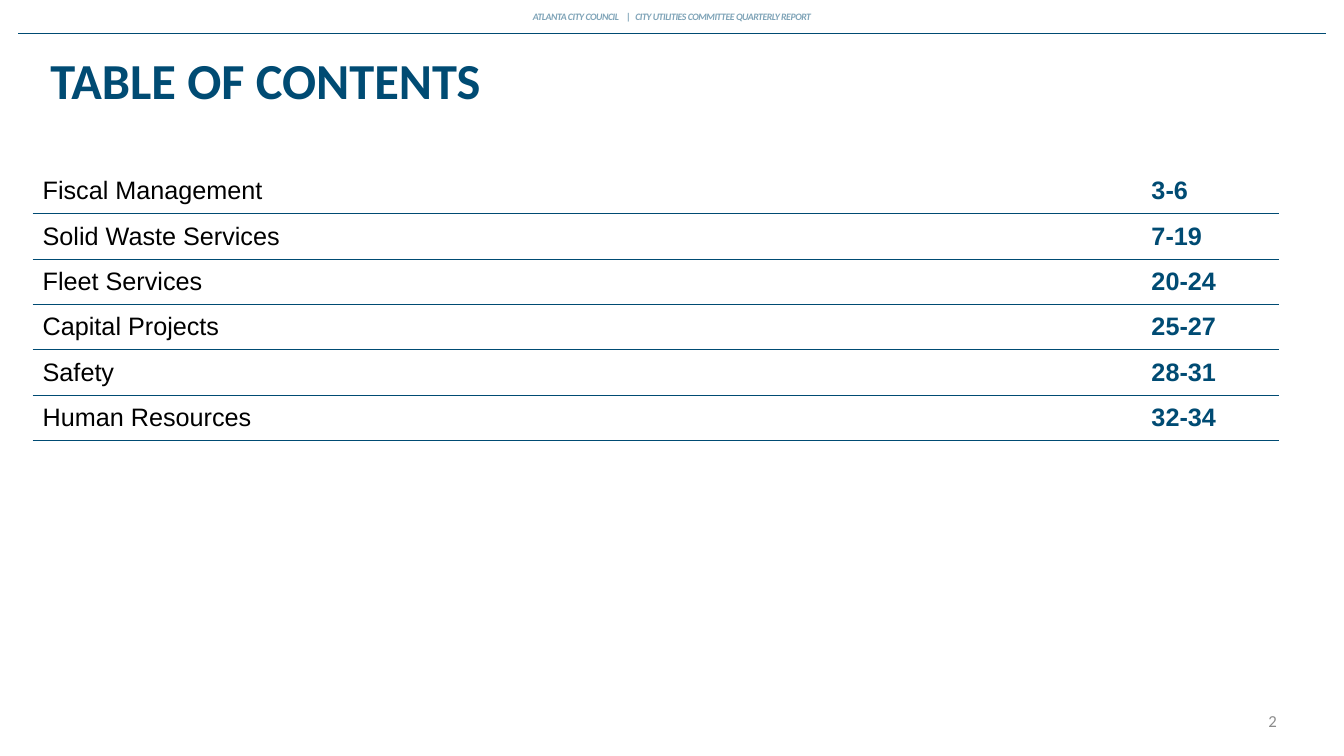
from lxml.etree import SubElement
from pptx import Presentation
from pptx.dml.color import RGBColor
from pptx.enum.shapes import MSO_CONNECTOR
from pptx.enum.text import MSO_ANCHOR, MSO_AUTO_SIZE, PP_ALIGN
from pptx.oxml import parse_xml
from pptx.oxml.ns import nsdecls, qn
from pptx.util import Pt

NAVY = RGBColor(0x00, 0x4B, 0x73)
PALE_BLUE = RGBColor(0x7F, 0xA4, 0xB8)
GRAY = RGBColor(0x8C, 0x8C, 0x8C)
BLACK = RGBColor(0x00, 0x00, 0x00)
RULE_WIDTH = Pt(0.75)
ROW_HEIGHT = 32.4

HEADER_SPANS = [
    ("ATLANTA CITY COUNCIL", -0.3),
    (" ", 3.8),
    ("|", -0.1),
    (" ", 1.4),
    ("CITY UTILITIES COMMITTEE QUARTERLY REPORT", -0.3),
]
CONTENTS = [
    ("Fiscal Management", "3-6"),
    ("Solid Waste Services", "7-19"),
    ("Fleet Services", "20-24"),
    ("Capital Projects", "25-27"),
    ("Safety", "28-31"),
    ("Human Resources", "32-34"),
]


def set_font(paragraph, name, size, color, bold=False, italic=False):
    font = paragraph.font
    font.name, font.size = name, Pt(size)
    font.bold, font.italic = bold, italic
    font.color.rgb = color


def prepare_frame(box, anchor, left_margin=0):
    frame = box.text_frame
    frame.word_wrap = True
    frame.auto_size = MSO_AUTO_SIZE.NONE
    frame.vertical_anchor = anchor
    frame.margin_left = Pt(left_margin)
    frame.margin_top = frame.margin_right = frame.margin_bottom = 0
    return frame.paragraphs[0]


def add_text_box(page, left, top, width, height, anchor, alignment):
    box = page.shapes.add_textbox(Pt(left), Pt(top), Pt(width), Pt(height))
    paragraph = prepare_frame(box, anchor)
    paragraph.alignment = alignment
    return paragraph


def add_header(page):
    paragraph = add_text_box(page, 350, 8, 260, 18.7, MSO_ANCHOR.TOP, PP_ALIGN.CENTER)
    for text, spacing in HEADER_SPANS:
        span = paragraph.add_run()
        span.text = text
        span.font._element.set("spc", str(round(spacing * 100)))
    set_font(paragraph, "Calibri", 7, PALE_BLUE, bold=True, italic=True)


def add_header_rule(page):
    rule = page.shapes.add_connector(
        MSO_CONNECTOR.STRAIGHT, Pt(13), Pt(23.8), Pt(946.8), Pt(23.8))
    rule.line.color.rgb = NAVY
    rule.line.width = RULE_WIDTH
    SubElement(rule._element.spPr, qn("a:effectLst"))


def set_title(page, text):
    title = page.shapes.title
    title.left, title.top, title.width, title.height = Pt(0), Pt(34.6), Pt(960), Pt(44)
    paragraph = prepare_frame(title, MSO_ANCHOR.MIDDLE, left_margin=36)
    paragraph.text = text
    paragraph.alignment = PP_ALIGN.LEFT
    set_font(paragraph, "Calibri", 36, NAVY, bold=True)


def set_borders(cell, visible):
    properties = cell._tc.get_or_add_tcPr()
    for position, side in enumerate(("lnL", "lnR", "lnT", "lnB")):
        fill = "<a:noFill/>"
        if side in visible:
            fill = f'<a:solidFill><a:srgbClr val="{NAVY}"/></a:solidFill>'
        border = parse_xml(
            f'<a:{side} {nsdecls("a")} w="{int(RULE_WIDTH)}">{fill}</a:{side}>')
        properties.insert(position, border)


def fill_cell(cell, text, color, bold, alignment, visible):
    cell.fill.background()
    set_borders(cell, visible)
    cell.vertical_anchor = MSO_ANCHOR.MIDDLE
    paragraph = cell.text_frame.paragraphs[0]
    paragraph.text = text
    paragraph.alignment = alignment
    set_font(paragraph, "Arial", 18, color, bold)


def add_contents_table(page):
    frame = page.shapes.add_table(
        len(CONTENTS), 2, Pt(23.3), Pt(120.2), Pt(890), Pt(ROW_HEIGHT * len(CONTENTS)))
    table = frame.table
    table.first_row = table.horz_banding = False
    for column, width in zip(table.columns, (792, 98)):
        column.width = Pt(width)
    for index, (section, pages) in enumerate(CONTENTS):
        table.rows[index].height = Pt(ROW_HEIGHT)
        visible = ("lnT", "lnB") if index else ("lnB",)
        name_cell, page_cell = table.cell(index, 0), table.cell(index, 1)
        fill_cell(name_cell, section, BLACK, False, PP_ALIGN.LEFT, visible)
        fill_cell(page_cell, pages, NAVY, True, PP_ALIGN.JUSTIFY, visible)
        page_cell.margin_right = Pt(14.4)


def add_page_number(page, number):
    paragraph = add_text_box(
        page, 691.2, 507.6, 221, 14.4, MSO_ANCHOR.MIDDLE, PP_ALIGN.RIGHT)
    paragraph.text = number
    set_font(paragraph, "Calibri", 12, GRAY)


def main():
    deck = Presentation()
    deck.slide_width, deck.slide_height = Pt(960), Pt(540)
    page = deck.slides.add_slide(deck.slide_layouts[5])
    add_header(page)
    add_header_rule(page)
    add_contents_table(page)
    add_page_number(page, "2")
    set_title(page, "TABLE OF CONTENTS")
    deck.save("out.pptx")


if __name__ == "__main__":
    main()
